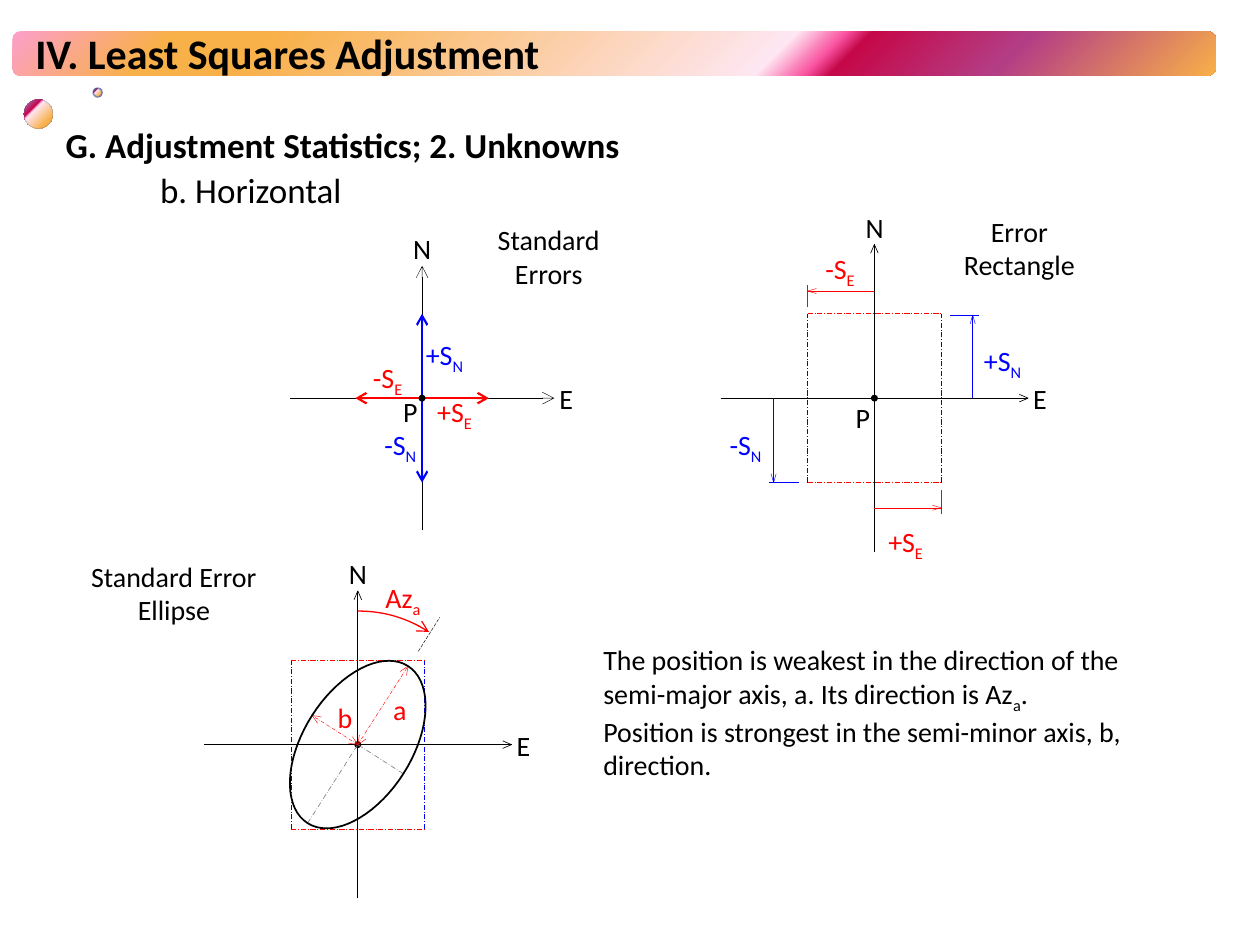
import math
from lxml import etree
from pptx import Presentation
from pptx.dml.color import RGBColor
from pptx.enum import dml, shapes, text
from pptx.oxml import ns
from pptx.util import Inches, Pt

BLACK = RGBColor(0x00, 0x00, 0x00)
GRAY = RGBColor(0x80, 0x80, 0x80)
RED = RGBColor(0xFF, 0x00, 0x00)
BLUE = RGBColor(0x00, 0x00, 0xFF)
FONT = "Calibri"
DASH_DOT = dml.MSO_LINE.LONG_DASH_DOT
DASH = dml.MSO_LINE.LONG_DASH

# ---- Content ----
TITLE = "IV. Least Squares Adjustment"
# text, level, format, space before
OUTLINE = [
    ("G. Adjustment Statistics; 2. Unknowns", 0, {"bold": True}, 7.5),
    ("b. Horizontal", 2, {"bold": False}, 3.8),
]
CONCLUSION = [
    ["The position is weakest in the direction of the semi-major axis, a. "
     "Its direction is Az", "a", "."],
    ["Position is strongest in the semi-minor axis, b, direction."],
]
RAINBOW = [(0, "FC9FCB"), (13, "F8B049"), (21, "F8B049"), (63, "FEE7F2"),
           (67, "F952A0"), (69, "C50849"), (82, "B43E85"), (100, "F8B049")]
# left, top, diameter, line colour, line width
BULLET_BALLS = [(0.19, 0.79, 0.23, "3B6BC1", 0.16), (0.74, 0.7, 0.07, "3C65AD", 1)]

# Captions: lines, box
CAPTIONS = {
    "rectangle": (["Error", "Rectangle"], (7.55, 1.65, 1.08, 0.64)),
    "errors": (["Standard", "Errors"], (3.85, 1.72, 1.01, 0.64)),
    "ellipse": (["Standard Error", "Ellipse"], (0.62, 4.39, 1.52, 0.64)),
}
# Labels: parts (every second one is a subscript), left, top, colour
LABELS = {
    "rectangle": [(["+S", "N"], 7.81, 2.73, BLUE), (["-S", "E"], 6.55, 2, RED),
                  (["+S", "E"], 7.05, 4.16, RED), (["-S", "N"], 5.79, 3.39, BLUE),
                  (["P"], 6.79, 3.18, BLACK)],
    "errors": [(["+S", "N"], 3.38, 2.68, BLUE), (["+S", "E"], 3.47, 3.13, RED),
               (["-S", "N"], 3.05, 3.39, BLUE), (["-S", "E"], 2.96, 2.86, RED),
               (["P"], 3.2, 3.13, BLACK)],
    "ellipse": [(["a"], 3.12, 5.5, RED), (["b"], 2.68, 5.56, RED),
                (["Az", "a"], 3.06, 4.61, RED)],
}
# Point P of each figure and the reach of its axes
ORIGINS = {"rectangle": (6.94, 3.16, 1.22), "errors": (3.35, 3.16, 1.05),
           "ellipse": (2.84, 5.91, 1.22)}
S_E, S_N = 0.53, 0.67
# Dimensions: extension line, arrow from, arrow to, colour
DIMENSIONS = [
    (((7.54, 2.5), (7.77, 2.5)), (7.72, 3.16), (7.72, 2.5), BLUE),
    (((6.41, 2.44), (6.41, 2.26)), (6.94, 2.31), (6.41, 2.31), RED),
    (((7.47, 3.89), (7.47, 4.08)), (6.94, 4.03), (7.47, 4.03), RED),
    (((6.34, 3.83), (6.1, 3.83)), (6.14, 3.16), (6.14, 3.83), BLUE),
]
AZIMUTH, SEMI_MAJOR, SEMI_MINOR = math.radians(32.6), 0.74, 0.43


# ---- Helpers ----
def inches(*values):
    return [Inches(v) for v in values]


def add_runs(paragraph, parts, color=BLACK, size=16, bold=None):
    for i, part in enumerate(parts):
        run = paragraph.add_run()
        run.text = part
        for name, value in {"name": FONT, "size": Pt(size), "bold": bold}.items():
            setattr(run.font, name, value)
        run.font.color.rgb = color
        if i % 2:
            run.font._element.set("baseline", "-25000")


def add_text(parent, paragraphs, box, color=BLACK, inset=None, wrap=False, align=None):
    frame = parent.shapes.add_textbox(*inches(*box)).text_frame
    frame.word_wrap = wrap
    if inset is not None:
        for side in ("left", "top", "right", "bottom"):
            setattr(frame, f"margin_{side}", Inches(inset))
    for i, parts in enumerate(paragraphs):
        p = frame.add_paragraph() if i else frame.paragraphs[0]
        p.alignment = align
        add_runs(p, parts, color)


def style_line(shape, color, width, dash=None, arrow=False):
    line = shape.line
    line.color.rgb = color
    line.width = Pt(width)
    if dash:
        line.dash_style = dash
    if arrow:
        etree.SubElement(line._get_or_add_ln(), ns.qn("a:tailEnd"), type="arrow")


def add_line(parent, start, end, color=BLACK, width=0.25, dash=None, arrow=False):
    line = parent.shapes.add_connector(
        shapes.MSO_CONNECTOR.STRAIGHT, *inches(*start, *end))
    style_line(line, color, width, dash, arrow)
    etree.SubElement(line._element.spPr, ns.qn("a:effectLst"))


def add_barbs(parent, start, tip, color, width, half=0.03):
    angle = math.atan2(tip[1] - start[1], tip[0] - start[0])
    ux, uy = math.cos(angle), math.sin(angle)
    for side in (half, -half):
        barb = (tip[0] - 0.07 * ux - side * uy, tip[1] - 0.07 * uy + side * ux)
        add_line(parent, barb, tip, color, width)


def add_axes(parent, cx, cy, reach, barbed=True):
    width = 0.38 if barbed else 0.25
    for start, tip in (((cx, cy + reach), (cx, cy - reach)),
                       ((cx - reach, cy), (cx + reach, cy))):
        add_line(parent, start, tip, width=width, arrow=not barbed)
        if barbed:
            add_barbs(parent, start, tip, BLACK, width)
    for name, x, y in (("N", cx - 0.07, cy - reach - 0.27),
                       ("E", cx + reach + 0.04, cy - 0.13)):
        add_text(parent, [[name]], (x, y, 0.14, 0.27), inset=0)


def add_error_box(parent, cx, cy):
    for sign in (1, -1):
        x, y = cx + sign * S_E, cy + sign * S_N
        add_line(parent, (x, cy + S_N), (x, cy - S_N), BLUE, 0.38, DASH_DOT)
        add_line(parent, (cx - S_E, y), (cx + S_E, y), RED, 0.38, DASH_DOT)


def add_point(parent, cx, cy):
    dot = parent.shapes.add_shape(shapes.MSO_SHAPE.OVAL,
                                  *inches(cx - 0.02, cy - 0.02, 0.04, 0.04))
    dot.shadow.inherit = False
    dot.fill.solid()
    dot.fill.fore_color.rgb = BLACK
    style_line(dot, BLACK, 1)


def add_rainbow(parent, kind, box, direction):
    shape = parent.shapes.add_shape(kind, *inches(*box))
    shape.shadow.inherit = False
    shape.fill.background()
    stops = "".join(f'<a:gs pos="{pos * 1000}"><a:srgbClr val="{c}"/></a:gs>'
                    for pos, c in RAINBOW)
    gradient = etree.fromstring(f'<a:gradFill {ns.nsdecls("a")} rotWithShape="1">'
                                f'<a:gsLst>{stops}</a:gsLst>{direction}</a:gradFill>')
    plain = shape._element.spPr.find(ns.qn("a:noFill"))
    plain.getparent().replace(plain, gradient)
    return shape


def add_notes(parent, figure):
    lines, box = CAPTIONS[figure]
    add_text(parent, [[line] for line in lines], box, align=text.PP_ALIGN.CENTER)
    for parts, x, y, color in LABELS[figure]:
        add_text(parent, [parts], (x, y, 0.3, 0.27), color, inset=0)


# ---- Slide, banner and title ----
prs = Presentation()
prs.slide_width, prs.slide_height = inches(10, 7.5)
slide = prs.slides.add_slide(prs.slide_layouts[1])
title, body = slide.shapes.title, slide.placeholders[1]

banner = add_rainbow(slide, shapes.MSO_SHAPE.ROUNDED_RECTANGLE, (0.1, 0.25, 9.55, 0.35),
                     '<a:lin ang="2700000" scaled="0"/>')
banner.line.fill.background()
slide.shapes._spTree.insert(2, banner._element)  # behind the title
for x, y, size, color, width in BULLET_BALLS:
    ball = add_rainbow(slide, shapes.MSO_SHAPE.OVAL, (x, y, size, size),
                       '<a:path path="circle"><a:fillToRect l="100000" t="100000"/></a:path>')
    style_line(ball, RGBColor.from_string(color), width)
    etree.SubElement(ball.line._get_or_add_ln().find(".//" + ns.qn("a:srgbClr")),
                     ns.qn("a:alpha"), val="60000")

for holder, box in ((title, (0.18, 0.17, 7.29, 0.5)), (body, (0.42, 0.97, 8.62, 5.86))):
    holder.left, holder.top, holder.width, holder.height = inches(*box)
    holder.text_frame.auto_size = text.MSO_AUTO_SIZE.NONE
heading = title.text_frame.paragraphs[0]
heading.alignment = text.PP_ALIGN.LEFT
add_runs(heading, [TITLE], size=24, bold=True)

for i, (words, level, look, before) in enumerate(OUTLINE):
    p = body.text_frame.add_paragraph() if i else body.text_frame.paragraphs[0]
    p.level, p.line_spacing, p.space_before = level, 0.9, Pt(before)
    add_runs(p, [words], size=20, **look)
    props = p._p.get_or_add_pPr()
    props.set("marL", str(Inches(0.75 * i)))
    props.set("indent", "0")
    etree.SubElement(props, ns.qn("a:buNone"))

# ---- Error rectangle ----
cx, cy, reach = ORIGINS["rectangle"]
group = slide.shapes.add_group_shape()
add_error_box(group, cx, cy)
add_axes(group, cx, cy, reach)
for extension, start, tip, color in DIMENSIONS:
    add_line(group, *extension, color)
    add_line(group, start, tip, color)
    add_barbs(group, start, tip, color, 0.25, 0.02)
add_point(group, cx, cy)
add_notes(group, "rectangle")

# ---- Standard errors ----
cx, cy, reach = ORIGINS["errors"]
group = slide.shapes.add_group_shape()
add_axes(group, cx, cy, reach, barbed=False)
for dx, dy, color in ((-S_E, 0, RED), (S_E, 0, RED), (0, -S_N, BLUE), (0, S_N, BLUE)):
    add_line(group, (cx, cy), (cx + dx, cy + dy), color, 1.25, arrow=True)
add_point(group, cx, cy)
add_notes(group, "errors")

# ---- Standard error ellipse ----
cx, cy, reach = ORIGINS["ellipse"]
group = slide.shapes.add_group_shape()
add_error_box(group, cx, cy)
add_axes(group, cx, cy, reach)
add_point(group, cx, cy)
sin, cos = math.sin(AZIMUTH), math.cos(AZIMUTH)


def on_ellipse(turn):
    a, b = SEMI_MAJOR * math.cos(turn), SEMI_MINOR * math.sin(turn)
    return cx + a * sin - b * cos, cy - a * cos - b * sin


for turn in (0, math.pi / 2):
    tip = on_ellipse(turn)
    add_line(group, on_ellipse(turn + math.pi), (cx, cy), GRAY, 0.38, DASH_DOT)
    add_line(group, (cx, cy), tip, RED, 0.25, DASH_DOT)
    add_barbs(group, (cx, cy), tip, RED, 0.25)
    add_barbs(group, tip, (cx, cy), RED, 0.25)

outline = [inches(*on_ellipse(math.radians(d))) for d in range(0, 360, 5)]
builder = group.shapes.build_freeform(*outline[0])
builder.add_line_segments(outline[1:], close=True)
ellipse = builder.convert_to_shape()
add_line(group, (3.32, 5.17), (3.49, 4.9), dash=DASH)
arc = group.shapes.add_shape(shapes.MSO_SHAPE.ARC, *inches(1.79, 4.85, 2.1, 2.1))
arc.adjustments[0], arc.adjustments[1] = 270 * 0.6, 302.58 * 0.6
for curve, color, width, arrow in ((ellipse, BLACK, 1, False), (arc, RED, 0, True)):
    curve.shadow.inherit = False
    curve.fill.background()
    style_line(curve, color, width, arrow=arrow)
add_notes(group, "ellipse")

# ---- Conclusion ----
add_text(slide, CONCLUSION, (4.69, 5.05, 4.66, 1.18), wrap=True)

prs.save("out.pptx")
